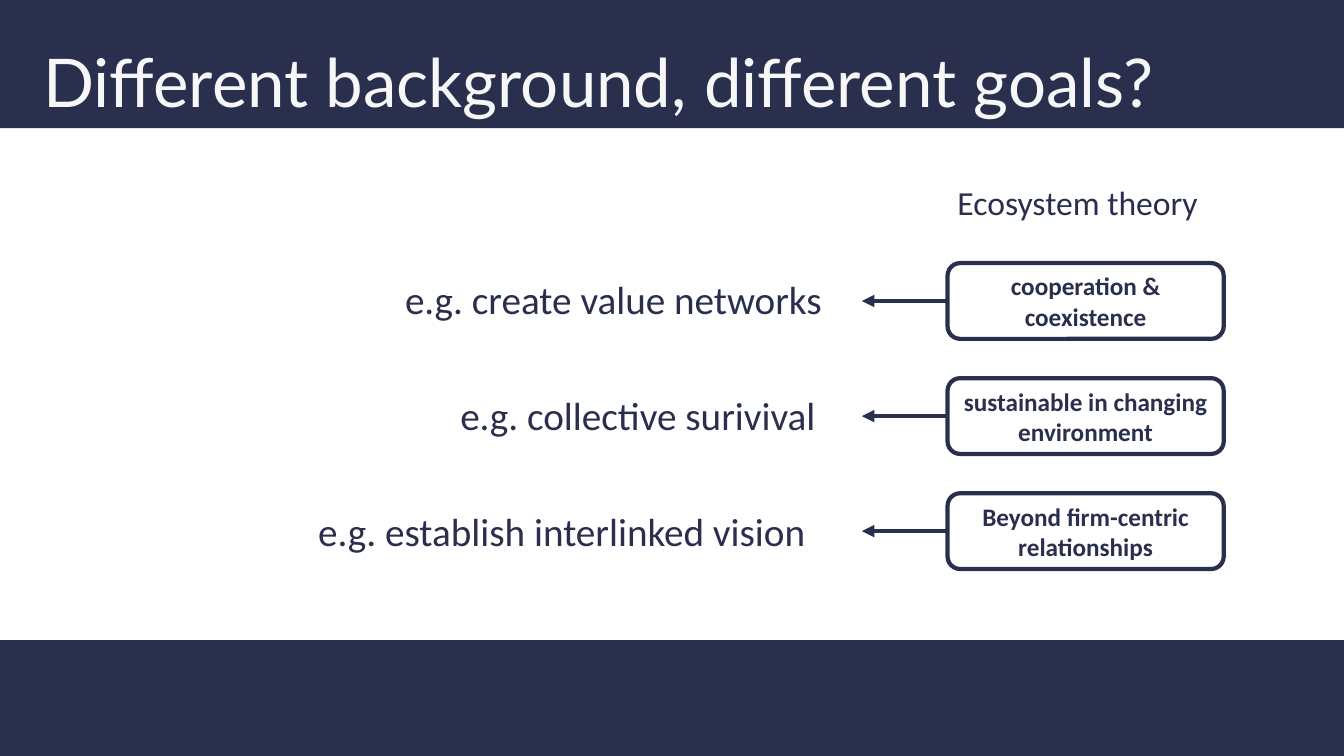
from lxml.etree import SubElement
from pptx import Presentation
from pptx.dml.color import RGBColor
from pptx.enum.shapes import MSO_CONNECTOR, MSO_SHAPE
from pptx.enum.text import MSO_ANCHOR, MSO_AUTO_SIZE, PP_ALIGN
from pptx.oxml.ns import qn
from pptx.util import Cm, Pt

NAVY = RGBColor(0x29, 0x2F, 0x4D)
PALE = RGBColor(0xF7, 0xF7, 0xF7)


def write(frame, text, size, align=PP_ALIGN.LEFT, color=NAVY, name="Calibri", bold=False):
    frame.text = text
    line = frame.paragraphs[0]
    line.alignment = align
    line.font.size = Pt(size)
    line.font.name = name
    line.font.bold = bold
    line.font.color.rgb = color


deck = Presentation()
deck.slide_width, deck.slide_height = Cm(33.87), Cm(19.05)
slide = deck.slides.add_slide(deck.slide_layouts[5])
shapes = slide.shapes

# Title
title = shapes.title
title.left, title.top, title.width, title.height = Cm(0.84), Cm(0.48), Cm(30.71), Cm(2.72)
frame = title.text_frame
frame.auto_size = MSO_AUTO_SIZE.NONE
frame.vertical_anchor = MSO_ANCHOR.BOTTOM
write(frame, "Different background, different goals?", 48, color=PALE, name="Lato")
frame.paragraphs[0].line_spacing = 0.9

# Bands behind the title
for top, height in ((16.13, 2.92), (0, 3.23)):
    band = shapes.add_shape(MSO_SHAPE.RECTANGLE, 0, Cm(top), deck.slide_width, Cm(height))
    band.shadow.inherit = False
    band.fill.solid()
    band.fill.fore_color.rgb = NAVY
    band.line.fill.background()
    title.element.addprevious(band.element)

# Column heading
head = shapes.add_textbox(Cm(23.88), Cm(4.45), Cm(6.86), Cm(1.27))
head.text_frame.word_wrap = False
write(head.text_frame, "Ecosystem theory", 24)

# Rows: theory box, arrow, example
rows = (
    ("cooperation & coexistence", "e.g. create value networks", 8.18, 12.78, PP_ALIGN.RIGHT),
    ("sustainable in changing environment", "e.g. collective surivival", 8.18, 12.62, PP_ALIGN.RIGHT),
    ("Beyond firm-centric relationships", "e.g. establish interlinked vision", 7.77, 13.18, PP_ALIGN.LEFT),
)
for i, (theory, goal, left, width, align) in enumerate(rows):
    box = shapes.add_shape(
        MSO_SHAPE.ROUNDED_RECTANGLE, Cm(23.88), Cm(6.63 + 2.9 * i), Cm(6.96), Cm(1.91))
    box.shadow.inherit = False
    box.fill.background()
    box.line.color.rgb = NAVY
    box.line.width = Pt(3)
    box.text_frame.word_wrap = True
    box.text_frame.vertical_anchor = MSO_ANCHOR.MIDDLE
    write(box.text_frame, theory, 18, PP_ALIGN.CENTER, bold=True)

    note = shapes.add_textbox(Cm(left), Cm(6.81 + 2.92 * i), Cm(width), Cm(1.45))
    note.text_frame.word_wrap = True
    write(note.text_frame, goal, 28, align)

    mid = box.top + box.height // 2
    arrow = shapes.add_connector(MSO_CONNECTOR.STRAIGHT, box.left, mid, Cm(21.72), mid)
    arrow.begin_connect(box, 1)
    arrow.line.color.rgb = NAVY
    arrow.line.width = Pt(3)
    SubElement(arrow.line._get_or_add_ln(), qn("a:tailEnd"), type="triangle")
    SubElement(arrow.element.spPr, qn("a:effectLst"))

deck.save("out.pptx")
